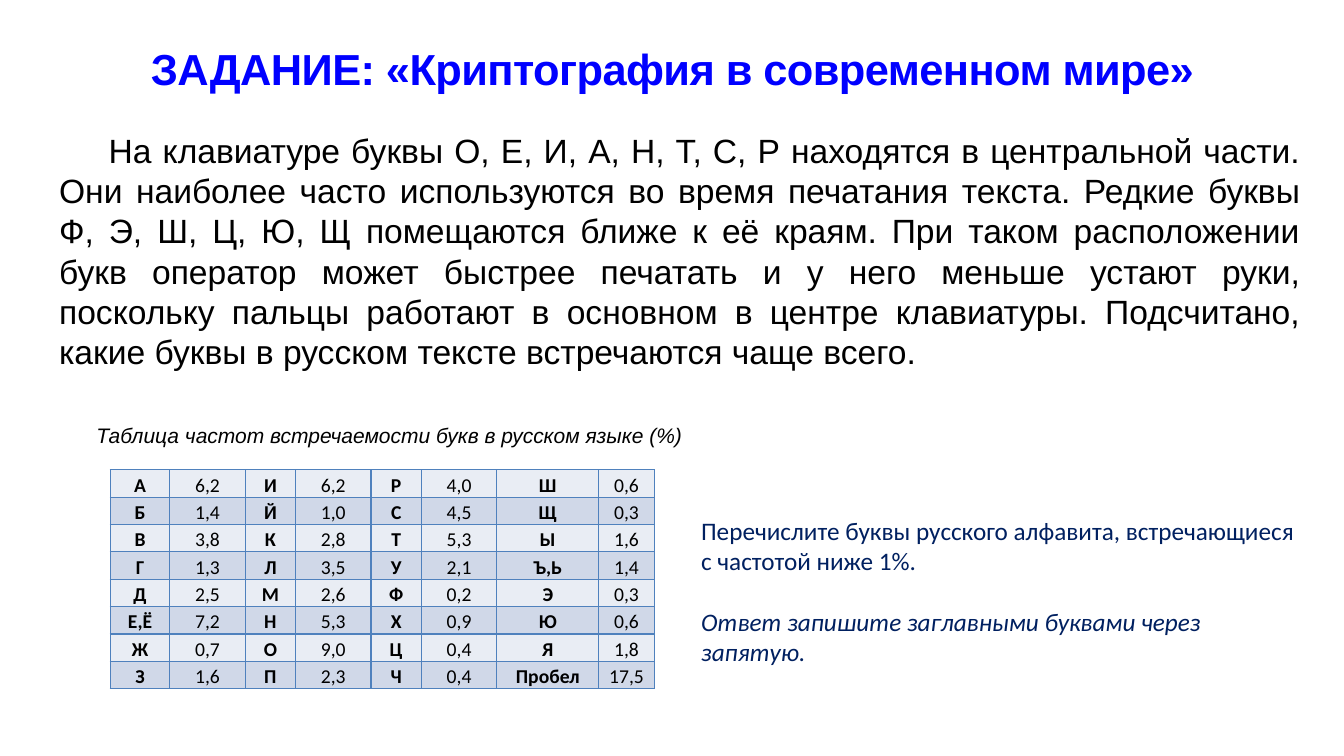
from dataclasses import dataclass

from lxml.etree import SubElement
from pptx import Presentation
from pptx.dml.color import RGBColor as RGB
from pptx.enum.text import MSO_ANCHOR as ANCHOR, PP_ALIGN as ALIGN
from pptx.oxml.ns import qn
from pptx.util import Cm, Pt

TITLE = "ЗАДАНИЕ: «Криптография в современном мире»"
INTRO = (
    "На клавиатуре буквы О, Е, И, А, Н, Т, С, Р находятся в центральной части. "
    "Они наиболее часто используются во время печатания текста. "
    "Редкие буквы Ф, Э, Ш, Ц, Ю, Щ помещаются ближе к её краям. "
    "При таком расположении букв оператор может быстрее печатать и у него меньше "
    "устают руки, поскольку пальцы работают в основном в центре клавиатуры. "
    "Подсчитано, какие буквы в русском тексте встречаются чаще всего."
)
CAPTION = "Таблица частот встречаемости букв в русском языке (%)"
QUESTION = "Перечислите буквы русского алфавита, встречающиеся с частотой ниже 1%."
ANSWER_HINT = "Ответ запишите заглавными буквами через запятую."
FREQUENCIES = [
    ("А", "6,2", "И", "6,2", "Р", "4,0", "Ш", "0,6"),
    ("Б", "1,4", "Й", "1,0", "С", "4,5", "Щ", "0,3"),
    ("В", "3,8", "К", "2,8", "Т", "5,3", "Ы", "1,6"),
    ("Г", "1,3", "Л", "3,5", "У", "2,1", "Ъ,Ь", "1,4"),
    ("Д", "2,5", "М", "2,6", "Ф", "0,2", "Э", "0,3"),
    ("Е,Ё", "7,2", "Н", "5,3", "Х", "0,9", "Ю", "0,6"),
    ("Ж", "0,7", "О", "9,0", "Ц", "0,4", "Я", "1,8"),
    ("З", "1,6", "П", "2,3", "Ч", "0,4", "Пробел", "17,5"),
]
COLUMN_WIDTHS = (1.5, 1.9, 1.27, 1.9, 1.27, 1.9, 2.57, 1.4)
ROW_HEIGHT = 0.69


@dataclass(frozen=True)
class Theme:
    heading_font: str = "Arial"
    note_font: str = "Calibri"
    blue: str = "0000FF"
    black: str = "000000"
    navy: str = "002060"
    border: str = "4F81BD"
    bands: tuple = ("E9EDF4", "D0D8E8")
    title_size: float = 31
    body_size: float = 24
    body_leading: float = 28.8
    caption_size: float = 15
    note_size: float = 18
    cell_size: float = 14


T = Theme()


def style(p, font, size, color, bold=False, italic=False):
    for r in p.runs:
        r.font.name = font
        r.font.size = Pt(size)
        r.font.color.rgb = RGB.from_string(color)
        r.font.bold = bold
        r.font.italic = italic


def add_text(s, box, lines, anchor=ANCHOR.TOP):
    """Add a wrapped text box and return its paragraphs."""
    tf = s.shapes.add_textbox(*map(Cm, box)).text_frame
    tf.word_wrap = True
    tf.vertical_anchor = anchor
    tf.text = "\n".join(lines)
    return tf.paragraphs


def set_borders(cell):
    tc_pr = cell._tc.get_or_add_tcPr()
    for i, side in enumerate(("lnL", "lnR", "lnT", "lnB")):
        ln = tc_pr.makeelement(qn(f"a:{side}"), {"w": str(Pt(1))})
        fill = SubElement(ln, qn("a:solidFill"))
        SubElement(fill, qn("a:srgbClr"), val=T.border)
        tc_pr.insert(i, ln)


def add_title(s):
    p, = add_text(s, (1.7, 0.69, 30.48, 2.06), [TITLE], ANCHOR.MIDDLE)
    p.alignment = ALIGN.CENTER
    style(p, T.heading_font, T.title_size, T.blue, bold=True)
    for r in p.runs:
        r._r.get_or_add_rPr().set("spc", "-40")


def add_intro(s):
    intro, caption = add_text(s, (1.24, 3.05, 31.78, 8.46), [INTRO, CAPTION], ANCHOR.MIDDLE)
    for p, indent in ((intro, 1.25), (caption, 0.94)):
        p.alignment = ALIGN.JUSTIFY
        p.line_spacing = Pt(T.body_leading)
        p._p.get_or_add_pPr().set("indent", str(Cm(indent)))
    caption.space_before = Pt(26)
    style(intro, T.heading_font, T.body_size, T.black)
    style(caption, T.heading_font, T.caption_size, T.black, italic=True)


def add_frequency_table(s):
    rows, cols = len(FREQUENCIES), len(COLUMN_WIDTHS)
    table = s.shapes.add_table(rows, cols, Cm(2.78), Cm(11.84),
                               Cm(sum(COLUMN_WIDTHS)), Cm(ROW_HEIGHT * rows)).table
    table.first_row = False
    for column, width in zip(table.columns, COLUMN_WIDTHS):
        column.width = Cm(width)
    for i, values in enumerate(FREQUENCIES):
        table.rows[i].height = Cm(ROW_HEIGHT)
        for j, value in enumerate(values):
            cell = table.cell(i, j)
            cell.margin_left = cell.margin_right = Cm(0.18)
            cell.margin_top = cell.margin_bottom = 0
            cell.fill.solid()
            cell.fill.fore_color.rgb = RGB.from_string(T.bands[i % 2])
            set_borders(cell)
            cell.text_frame.text = value
            p = cell.text_frame.paragraphs[0]
            p.alignment = ALIGN.CENTER
            p.line_spacing = 1.15
            style(p, T.note_font, T.cell_size, T.black, bold=j % 2 == 0)


def add_question(s):
    question, hint = add_text(s, (17.42, 12.85, 15.57, 4.11), [QUESTION, ANSWER_HINT])
    hint.space_before = Pt(22)
    style(question, T.note_font, T.note_size, T.navy)
    style(hint, T.note_font, T.note_size, T.navy, italic=True)


def main():
    prs = Presentation()
    prs.slide_width, prs.slide_height = Cm(33.87), Cm(19.05)
    s = prs.slides.add_slide(prs.slide_layouts[6])
    add_title(s)
    add_frequency_table(s)
    add_intro(s)
    add_question(s)
    prs.save("out.pptx")


if __name__ == "__main__":
    main()
